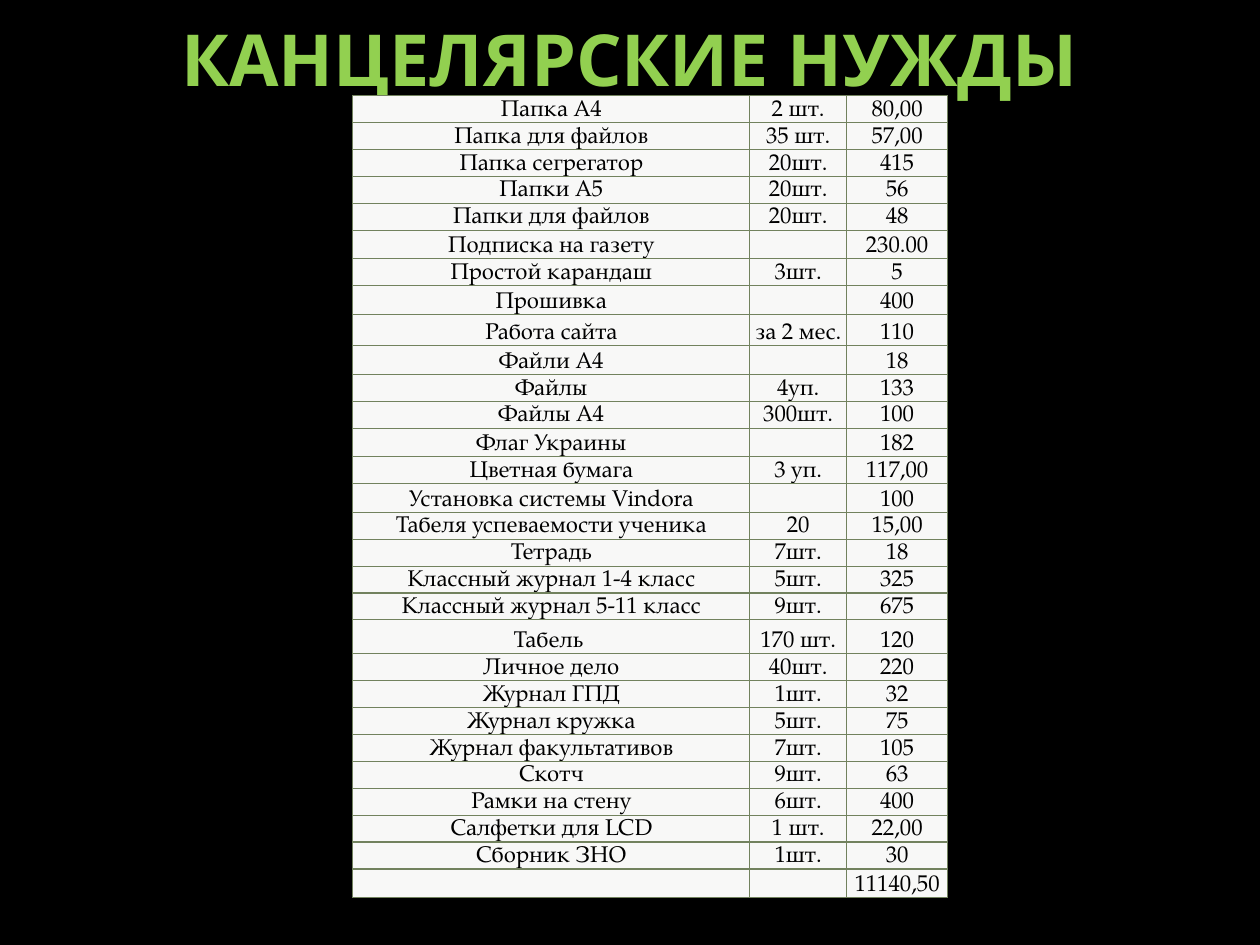
"""Build a slide listing stationery expenses in a table."""
import pptx
import pptx.dml.color
import pptx.enum.text
import pptx.oxml
import pptx.oxml.ns
import pptx.util
from pptx.util import Inches

TITLE = "КАНЦЕЛЯРСКИЕ НУЖДЫ"
ITEMS = [
    ("Папка А4", "2 шт.", "80,00"),
    ("Папка для файлов", "35 шт.", "57,00"),
    ("Папка сегрегатор", "20шт.", "415"),
    ("Папки А5", "20шт.", "56"),
    ("Папки для файлов", "20шт.", "48"),
    ("Подписка на газету", "", "230.00"),
    ("Простой карандаш", "3шт.", "5"),
    ("Прошивка", "", "400"),
    ("Работа сайта", "за 2 мес.", "110"),
    ("Файли А4", "", "18"),
    ("Файлы", "4уп.", "133"),
    ("Файлы А4", "300шт.", "100"),
    ("Флаг Украины", "", "182"),
    ("Цветная бумага", "3 уп.", "117,00"),
    ("Установка системы Vindora", "", "100"),
    ("Табеля успеваемости ученика", "20", "15,00"),
    ("Тетрадь", "7шт.", "18"),
    ("Классный журнал 1-4 класс", "5шт.", "325"),
    ("Классный журнал 5-11 класс", "9шт.", "675"),
    ("Табель ", "170 шт.", "120"),
    ("Личное дело", "40шт.", "220"),
    ("Журнал ГПД", "1шт.", "32"),
    ("Журнал кружка", "5шт.", "75"),
    ("Журнал факультативов", "7шт.", "105"),
    ("Скотч", "9шт.", "63"),
    ("Рамки на стену", "6шт.", "400"),
    ("Салфетки для LCD", "1 шт.", "22,00"),
    ("Сборник ЗНО", "1шт.", "30"),
    ("", "", "11140,50"),
]
COL_WIDTHS = [3.15, 0.77, 0.8]
TALL_ROWS = {8: 0.25, 19: 0.27, 28: 0.23}
TABLE_LEFT, TABLE_TOP, TABLE_HEIGHT = 2.8, 0.76, 6.3
LINE_HEIGHT = 14.5
BLACK, GREEN, PAPER, BORDER = "000000", "92D050", "F8F8F7", "72825E"


def rgb(value):
    return pptx.dml.color.RGBColor.from_string(value)


def write(tf, text, font, size, color, bold=False):
    tf.text = text
    p = tf.paragraphs[0]
    p.alignment = pptx.enum.text.PP_ALIGN.CENTER
    for r in p.runs:
        r.font.name, r.font.size, r.font.bold = font, pptx.util.Pt(size), bold
        r.font.color.rgb = rgb(color)
    if not text:
        end = pptx.oxml.parse_xml(f'<a:endParaRPr {pptx.oxml.ns.nsdecls("a")} sz="{size * 100}"/>')
        p._p.append(end)
    return p


def add_borders(cell):
    tcPr = cell._tc.get_or_add_tcPr()
    for i, side in enumerate(("lnL", "lnR", "lnT", "lnB")):
        tcPr.insert(i, pptx.oxml.parse_xml(
            f'<a:{side} {pptx.oxml.ns.nsdecls("a")} w="{pptx.util.Pt(0.75)}">'
            f'<a:solidFill><a:srgbClr val="{BORDER}"/></a:solidFill></a:{side}>'))


def add_title(s):
    tf = s.shapes.add_textbox(Inches(0.5), 0, Inches(9), Inches(0.92)).text_frame
    tf.word_wrap = True
    tf.vertical_anchor = pptx.enum.text.MSO_ANCHOR.MIDDLE
    write(tf, TITLE, "Noto Sans", 41, GREEN, True)


def add_expenses(s):
    table = s.shapes.add_table(
        len(ITEMS), len(COL_WIDTHS), Inches(TABLE_LEFT), Inches(TABLE_TOP),
        Inches(sum(COL_WIDTHS)), Inches(TABLE_HEIGHT)).table
    for col, width in zip(table.columns, COL_WIDTHS):
        col.width = Inches(width)
    row_height = (TABLE_HEIGHT - sum(TALL_ROWS.values())) / (len(ITEMS) - len(TALL_ROWS))
    for i, item in enumerate(ITEMS):
        table.rows[i].height = Inches(TALL_ROWS.get(i, row_height))
        for j, text in enumerate(item):
            cell = table.cell(i, j)
            cell.margin_left = cell.margin_right = cell.margin_top = Inches(0.01)
            cell.margin_bottom = 0
            cell.vertical_anchor = pptx.enum.text.MSO_ANCHOR.BOTTOM
            cell.fill.solid()
            cell.fill.fore_color.rgb = rgb(PAPER)
            add_borders(cell)
            p = write(cell.text_frame, text, "TeX Gyre Pagella", 13, BLACK)
            p.line_spacing = pptx.util.Pt(LINE_HEIGHT)


def main():
    prs = pptx.Presentation()
    prs.slide_width, prs.slide_height = Inches(10), Inches(7.5)
    s = prs.slides.add_slide(prs.slide_layouts[6])
    s.background.fill.solid()
    s.background.fill.fore_color.rgb = rgb(BLACK)
    add_title(s)
    add_expenses(s)
    prs.save("out.pptx")


if __name__ == "__main__":
    main()
